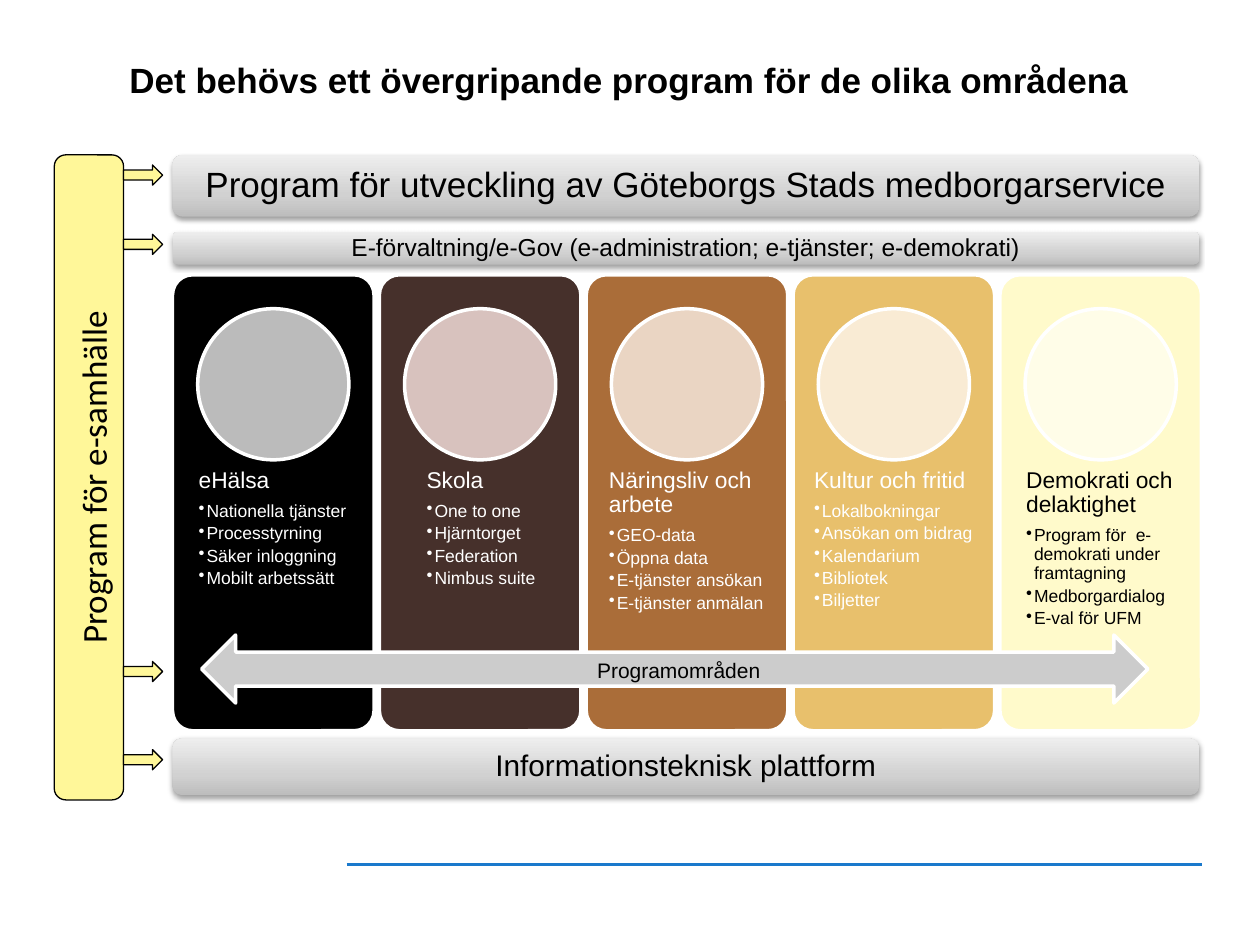
from copy import deepcopy
from lxml.etree import SubElement as Sub
from pptx import Presentation
from pptx.dml.color import RGBColor as Rgb
from pptx.enum.shapes import MSO_CONNECTOR as Line, MSO_SHAPE as Kind
from pptx.enum.text import MSO_ANCHOR as Anchor, PP_ALIGN as Align
from pptx.oxml.ns import qn
from pptx.util import Pt

HUES = {
    "black": "000000", "white": "FFFFFF", "blue": "1A79CC",
    "lemon": "FFF799", "arrow": "CCCCCC",
    "low": "BDBDBD", "mid": "D1D1D1", "high": "EEEEEE",
}
BARS = [
    ("E-förvaltning/e-Gov (e-administration; e-tjänster; e-demokrati)", 132.5, 18.7, 14),
    ("Program för utveckling av Göteborgs Stads medborgarservice", 88.5, 35.3, 20),
    ("Informationsteknisk plattform", 422, 32.4, 17),
]
AREAS = [
    ("eHälsa", ["Nationella tjänster", "Processtyrning", "Säker inloggning",
                "Mobilt arbetssätt"], "000000", "BBBBBB", "white", 15),
    ("Skola", ["One to one", "Hjärntorget", "Federation", "Nimbus suite"],
     "46302B", "D8C2BE", "white", 27),
    ("Näringsliv och arbete", ["GEO-data", "Öppna data", "E-tjänster ansökan",
                               "E-tjänster anmälan"], "AA6D39", "EAD5C3", "white", 13),
    ("Kultur och fritid", ["Lokalbokningar", "Ansökan om bidrag", "Kalendarium",
                           "Bibliotek", "Biljetter"], "E8C06C", "F9EBD4", "white", 12),
    ("Demokrati och delaktighet", ["Program för  e-demokrati under framtagning",
                                   "Medborgardialog", "E-val för UFM"],
     "FFFACB", "FFFDE8", "black", 15),
]


def style(para, size, hue="black", face="Arial", bold=False):
    font = para.font
    font.size, font.name, font.bold = Pt(size), face, bold
    font.color.rgb = Rgb.from_string(HUES[hue])


def add_form(slide, kind, box, fill=None, edge=None, width=2):
    form = slide.shapes.add_shape(kind, *map(Pt, box))
    form.shadow.inherit = False
    if fill:
        form.fill.solid()
        form.fill.fore_color.rgb = Rgb.from_string(fill)
    if edge:
        form.line.color.rgb = Rgb.from_string(HUES[edge])
        form.line.width = Pt(width)
    else:
        form.line.fill.background()
    return form


def add_shade(form):
    effects = form._element.spPr.find(qn("a:effectLst"))
    cast = Sub(effects, qn("a:outerShdw"), blurRad=str(Pt(3.1)), dist=str(Pt(1.6)),
               dir="5400000", rotWithShape="0")
    tint = Sub(cast, qn("a:srgbClr"), val=HUES["black"])
    Sub(tint, qn("a:alpha"), val="38000")


def add_bar(slide, text, top, height, size):
    bar = add_form(slide, Kind.ROUNDED_RECTANGLE, (98.6, top, 586.8, height))
    bar.fill.gradient()
    bar.fill.gradient_angle = 90
    first = next(bar._element.iter(qn("a:gs")))
    first.addnext(deepcopy(first))
    stops = zip(bar.fill.gradient_stops, (0, 0.35, 1), ("low", "mid", "high"))
    for stop, place, hue in stops:
        stop.position = place
        stop.color.rgb = Rgb.from_string(HUES[hue])
    add_shade(bar)
    frame = bar.text_frame
    frame.margin_top = frame.margin_bottom = 0
    frame.vertical_anchor = Anchor.MIDDLE
    para = frame.paragraphs[0]
    para.text, para.alignment, para.line_spacing = text, Align.CENTER, 0.9
    style(para, size)


def add_list(slide, head, items, box, hue, inset):
    frame = slide.shapes.add_textbox(*map(Pt, box)).text_frame
    frame.word_wrap = True
    frame.margin_left = Pt(inset)
    frame.margin_top = frame.margin_right = frame.margin_bottom = Pt(7.2)
    para = frame.paragraphs[0]
    para.text, para.line_spacing, para.space_after = head, 0.9, Pt(5)
    style(para, 13, hue)
    for item in items:
        para = frame.add_paragraph()
        para.text, para.level = item, 1
        para.line_spacing, para.space_after = 0.9, Pt(2)
        props = para._p.get_or_add_pPr()
        props.set("marL", str(Pt(4.5)))
        props.set("indent", str(-Pt(4.5)))
        Sub(props, qn("a:buChar"), char="•")
        style(para, 10, hue)


def add_area(slide, left, head, items, fill, disc, hue, inset):
    card = add_form(slide, Kind.ROUNDED_RECTANGLE, (left, 157, 115.2, 260.6), fill, "white")
    card.adjustments[0] = 0.1
    add_list(slide, head, items, (left, 260.6, 115.2, 104.4), hue, inset)
    add_form(slide, Kind.OVAL, (left + 14.4, 176.4, 86.4, 86.4), disc, "white")


def add_label(slide):
    box = slide.shapes.add_textbox(Pt(334.1), Pt(372.2), Pt(118.8), Pt(21.6))
    box.text_frame.word_wrap = True
    para = box.text_frame.paragraphs[0]
    para.text = "Programområden"
    style(para, 12)


def add_side(slide):
    side = add_form(slide, Kind.ROUNDED_RECTANGLE, (31, 88.5, 39.6, 368.6),
                    HUES["lemon"], "black", 0.75)
    frame = side.text_frame
    frame._txBody.bodyPr.set("vert", "vert270")
    frame.vertical_anchor = Anchor.BOTTOM
    para = frame.paragraphs[0]
    para.text, para.alignment = "Program för e-samhälle", Align.CENTER
    style(para, 20, face="Calibri")
    for top in (94.3, 133.9, 378, 428.4):
        add_form(slide, Kind.RIGHT_ARROW, (70.6, top, 22.3, 11.5),
                 HUES["lemon"], "black", 0.75)


def add_rule(slide):
    rule = slide.shapes.add_connector(Line.STRAIGHT, Pt(198), Pt(494), Pt(687), Pt(494))
    rule.line.color.rgb = Rgb.from_string(HUES["blue"])
    rule.line.width = Pt(2)
    Sub(rule._element.spPr, qn("a:effectLst"))


def set_title(slide):
    title = slide.shapes.title
    title.left, title.top, title.width, title.height = map(Pt, (65.5, 26, 588.2, 39))
    frame = title.text_frame
    frame.text = "Det behövs ett övergripande program för de olika områdena"
    frame.vertical_anchor = Anchor.MIDDLE
    frame.paragraphs[0].alignment = Align.CENTER
    style(frame.paragraphs[0], 20, bold=True)


def main():
    deck = Presentation()
    deck.slide_width, deck.slide_height = Pt(720), Pt(540)
    slide = deck.slides.add_slide(deck.slide_layouts[5])
    set_title(slide)
    add_rule(slide)
    for bar in BARS:
        add_bar(slide, *bar)
    for rank, area in enumerate(AREAS):
        add_area(slide, 98.6 + 118.2 * rank, *area)
    add_form(slide, Kind.LEFT_RIGHT_ARROW, (115.2, 362.9, 540.7, 38.9),
             HUES["arrow"], "white")
    add_label(slide)
    add_side(slide)
    deck.save("out.pptx")


if __name__ == "__main__":
    main()
